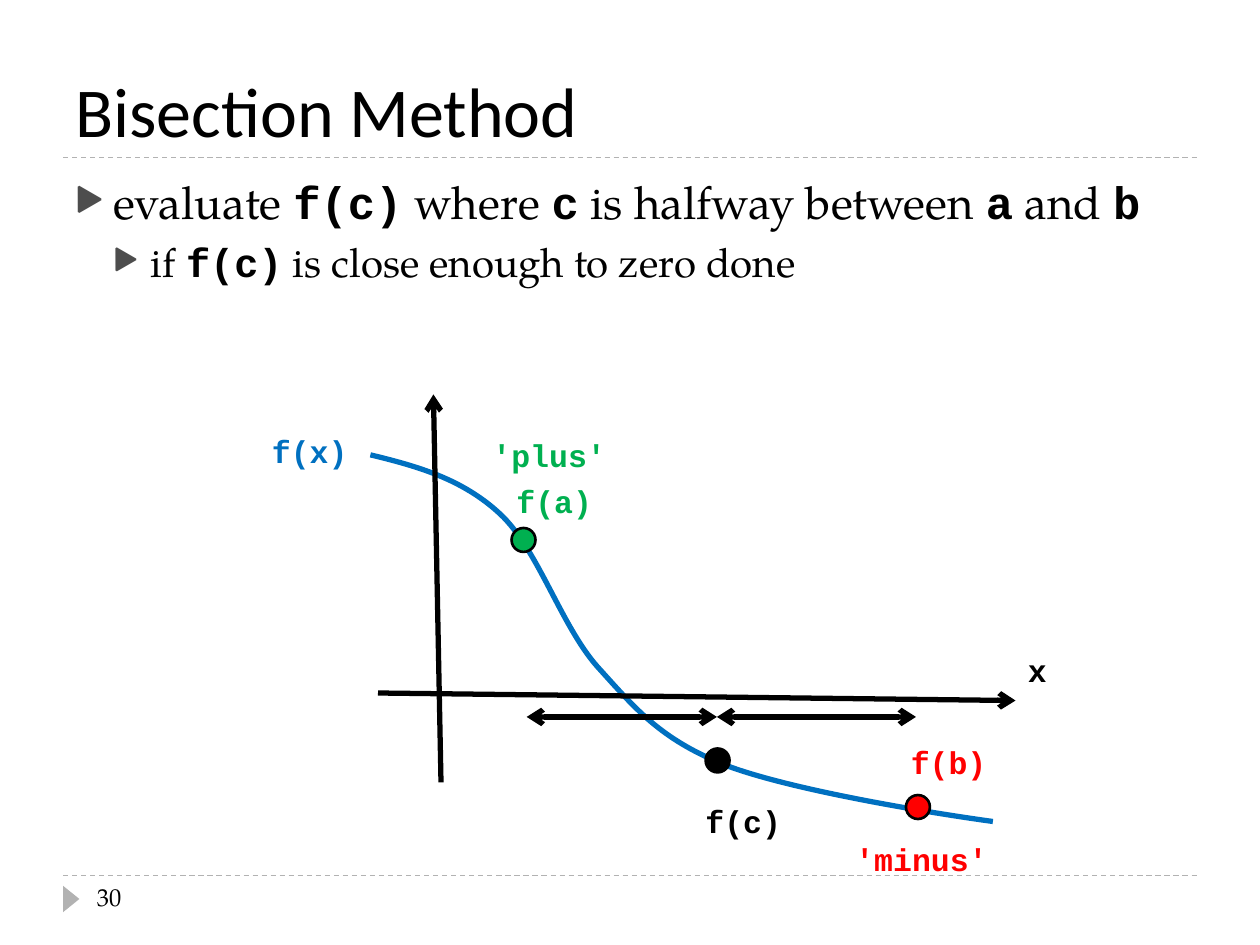
from lxml import etree
from pptx import Presentation
from pptx.dml.color import RGBColor
from pptx.enum import dml, shapes, text
from pptx.oxml import ns
from pptx.util import Inches, Pt

BLACK = RGBColor(0x00, 0x00, 0x00)
GRAY = RGBColor(0xB2, 0xB2, 0xB2)
BLUE = RGBColor(0x00, 0x70, 0xC0)
GREEN = RGBColor(0x00, 0xB0, 0x50)
RED = RGBColor(0xFF, 0x00, 0x00)
BULLET_COLOR = RGBColor(0x4D, 0x4D, 0x4D)
SERIF, CODE, HEADING = "TeX Gyre Pagella", "Courier New", "Calibri"

TITLE = "Bisection Method"
PAGE_NUMBER = "30"
# size, space before, then pieces that alternate between prose and code
BULLETS = [
    (26, 6, ["evaluate ", "f(c)", " where ", "c", " is halfway between ", "a", " and ", "b"]),
    (23, 5, ["if ", "f(c)", " is close enough to zero done"]),
]
INDENT = 0.3

RULES = [1.25, 6.95]
# start point, then control, control, end for each cubic segment
CURVE = [
    (2.94, 3.61),
    (3.31, 3.7), (3.67, 3.8), (3.97, 4.08),
    (4.27, 4.36), (4.45, 4.96), (4.74, 5.29),
    (5.04, 5.62), (5.23, 5.86), (5.75, 6.07),
    (6.27, 6.27), (7.37, 6.45), (7.88, 6.52),
]
AXES = [((3.5, 6.21), (3.44, 3.13)), ((3, 5.5), (8.06, 5.56))]
HALVES = [((4.18, 5.69), (5.69, 5.69)), ((5.69, 5.69), (7.27, 5.69))]
DOT_SIZE = 0.19
DOTS = [(4.06, 4.19, GREEN), (7.19, 6.31, RED), (5.6, 5.94, BLACK)]
LABELS = [
    ("x", 8.06, 5.12, 0.35, BLACK),
    ("f(x)", 2.06, 3.38, 0.81, BLUE),
    ("f(a)", 4, 3.78, 0.81, GREEN),
    ("f(b)", 7.13, 5.85, 0.81, RED),
    ("f(c)", 5.5, 6.32, 0.81, BLACK),
    ("'plus'", 3.81, 3.41, 1.11, GREEN),
    ("'minus'", 6.69, 6.62, 1.26, RED),
]


def style(span, font, size, color=BLACK, bold=False):
    span.font.name, span.font.size, span.font.bold = font, Pt(size), bold
    span.font.color.rgb = color


def add_line(page, start, end, color=BLACK, width=3, arrows=()):
    """Draw a straight line; arrows names the ends (headEnd, tailEnd) that get one."""
    line = page.shapes.add_connector(
        shapes.MSO_CONNECTOR.STRAIGHT, *(Inches(value) for value in start + end))
    line.line.color.rgb, line.line.width = color, Pt(width)
    for arrow in arrows:
        etree.SubElement(line.line._get_or_add_ln(), ns.qn("a:" + arrow), type="arrow")
    etree.SubElement(line._element.spPr, ns.qn("a:effectLst"))
    return line


def add_text(page, words, left, top, width, font, size, color=BLACK, bold=False, wrap=True):
    box = page.shapes.add_textbox(Inches(left), Inches(top), Inches(width), Inches(0.4))
    box.text_frame.word_wrap = wrap
    if not wrap:
        box.text_frame.auto_size = text.MSO_AUTO_SIZE.SHAPE_TO_FIT_TEXT
    box.text_frame.text = words
    style(box.text_frame.paragraphs[0].runs[0], font, size, color, bold)


def add_filled(page, preset, left, top, width, height, color):
    shape = page.shapes.add_shape(
        preset, Inches(left), Inches(top), Inches(width), Inches(height))
    shape.shadow.inherit = False
    shape.fill.solid()
    shape.fill.fore_color.rgb = color
    return shape


def add_frame(page):
    for y in RULES:
        rule = add_line(page, (0.5, y), (9.5, y), GRAY, 0.75)
        rule.line.dash_style = dml.MSO_LINE.DASH
    marker = add_filled(
        page, shapes.MSO_SHAPE.ISOSCELES_TRIANGLE, 0.46, 7.07, 0.21, 0.13, GRAY)
    marker.rotation = 90
    marker.line.fill.background()
    add_text(page, PAGE_NUMBER, 0.67, 6.95, 2.17, SERIF, 14)


def add_title(page):
    title = page.shapes.title
    title.left, title.top, title.width, title.height = map(Inches, (0.5, 0.17, 9, 1.08))
    frame = title.text_frame
    frame.text = TITLE
    frame.auto_size = text.MSO_AUTO_SIZE.NONE
    frame.vertical_anchor = text.MSO_ANCHOR.BOTTOM
    frame.paragraphs[0].alignment = text.PP_ALIGN.LEFT
    style(frame.paragraphs[0].runs[0], HEADING, 40)


def add_bullets(page):
    box = page.shapes.add_textbox(Inches(0.5), Inches(1.33), Inches(9), Inches(5.4))
    frame = box.text_frame
    frame.word_wrap = True
    for level, (size, space, pieces) in enumerate(BULLETS):
        para = frame.add_paragraph() if level else frame.paragraphs[0]
        para.level, para.space_before = level, Pt(space)
        for index, piece in enumerate(pieces):
            span = para.add_run()
            span.text = piece
            is_code = index % 2 == 1
            style(span, CODE if is_code else SERIF, size, bold=is_code)
        props = para._p.get_or_add_pPr()
        props.set("marL", str(Inches(INDENT * (level + 1))))
        props.set("indent", str(-Inches(INDENT)))
        color = etree.SubElement(props, ns.qn("a:buClr"))
        etree.SubElement(color, ns.qn("a:srgbClr"), val=str(BULLET_COLOR))
        etree.SubElement(props, ns.qn("a:buSzPct"), val="76000")
        etree.SubElement(props, ns.qn("a:buFont"), typeface=SERIF)
        etree.SubElement(props, ns.qn("a:buChar"), char="▶")


def add_curve(page):
    """Build the outline through all points, then merge each three into a cubic."""
    # The builder rounds to whole units, so the points go in as EMU.
    start, *rest = [(Inches(x), Inches(y)) for x, y in CURVE]
    builder = page.shapes.build_freeform(*start)
    builder.add_line_segments(rest, close=False)
    curve = builder.convert_to_shape()
    steps = list(curve._element.iter(ns.qn("a:lnTo")))
    for first in range(0, len(steps), 3):
        cubic = etree.Element(ns.qn("a:cubicBezTo"))
        steps[first].addprevious(cubic)
        for step in steps[first:first + 3]:
            cubic.append(step[0])
            step.getparent().remove(step)
    curve.shadow.inherit = False
    curve.fill.background()
    curve.line.color.rgb, curve.line.width = BLUE, Pt(3)


def add_graph(page):
    add_curve(page)
    for start, end in AXES:
        add_line(page, start, end, arrows=["tailEnd"])
    for left, top, color in DOTS:
        dot = add_filled(page, shapes.MSO_SHAPE.OVAL, left, top, DOT_SIZE, DOT_SIZE, color)
        dot.line.color.rgb, dot.line.width = BLACK, Pt(1.5)
    for words, left, top, width, color in LABELS:
        add_text(page, words, left, top, width, CODE, 18, color, bold=True, wrap=False)
    for start, end in HALVES:
        add_line(page, start, end, arrows=["headEnd", "tailEnd"])


def main():
    deck = Presentation()
    deck.slide_width, deck.slide_height = Inches(10), Inches(7.5)
    page = deck.slides.add_slide(deck.slide_layouts.get_by_name("Title Only"))
    add_frame(page)
    add_title(page)
    add_bullets(page)
    add_graph(page)
    deck.save("out.pptx")


if __name__ == "__main__":
    main()
